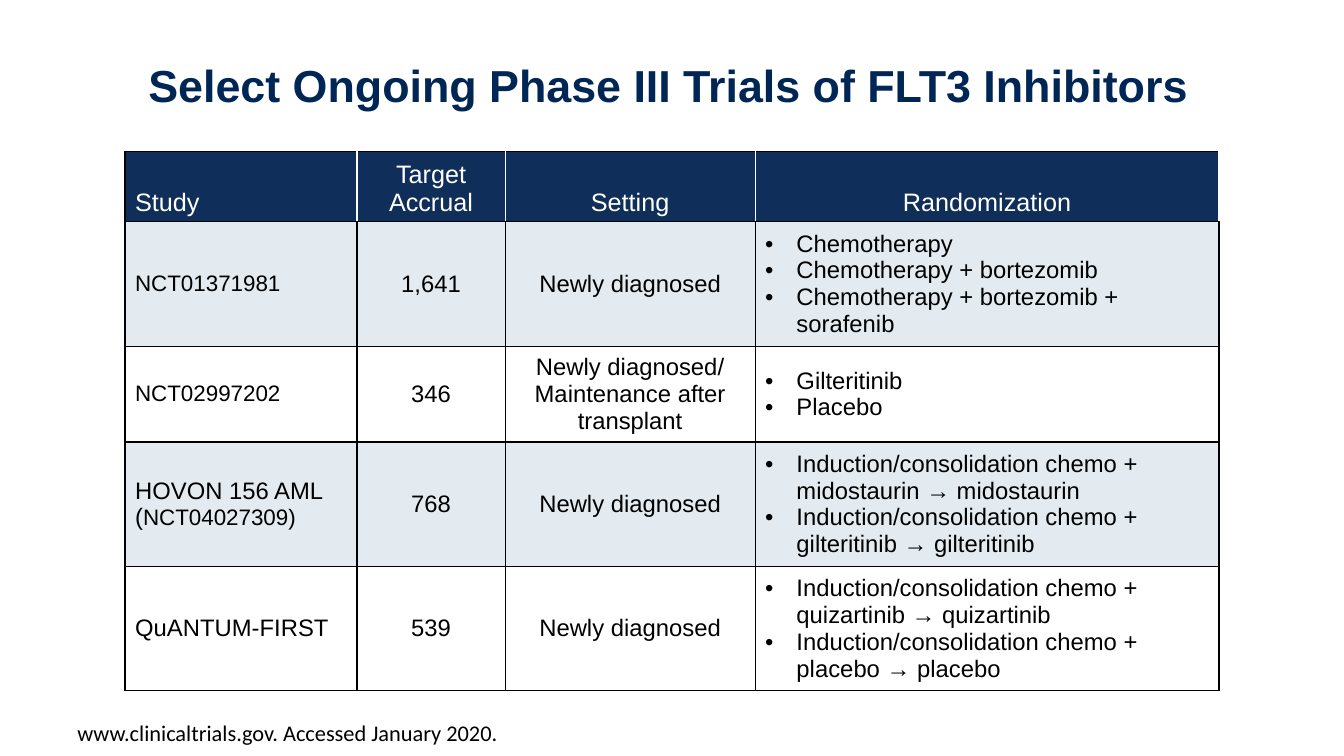
from pptx import Presentation
from pptx.dml.color import RGBColor as Rgb
from pptx.enum.text import MSO_ANCHOR as Anchor, PP_ALIGN as Align
from pptx.oxml.ns import qn
from pptx.util import Inches, Pt
from lxml.etree import SubElement

COLORS = {
    "title": "002656",
    "header": "0F2E59",
    "band": "E3EBF0",
    "white": "FFFFFF",
    "black": "000000",
}
COLUMN_WIDTHS = [2.3, 1.47, 2.48, 4.6]
ROW_HEIGHTS = [0.66, 1.16, 0.92, 1.16, 1.16]
HEADINGS = ["Study", "Target Accrual", "Setting", "Randomization"]
TRIALS = [
    ([[("NCT01371981", 16)]], "1,641", ["Newly diagnosed"],
     ["Chemotherapy", "Chemotherapy + bortezomib",
      "Chemotherapy + bortezomib + sorafenib"]),
    ([[("NCT02997202", 16)]], "346",
     ["Newly diagnosed/", "Maintenance after transplant"],
     ["Gilteritinib", "Placebo"]),
    ([[("HOVON 156 AML", 17)], [("(", 17), ("NCT04027309)", 16)]],
     "768", ["Newly diagnosed"],
     ["Induction/consolidation chemo + midostaurin → midostaurin",
      "Induction/consolidation chemo + gilteritinib → gilteritinib"]),
    ([[("QuANTUM-FIRST", 17)]], "539", ["Newly diagnosed"],
     ["Induction/consolidation chemo + quizartinib → quizartinib",
      "Induction/consolidation chemo + placebo → placebo"]),
]


def apply(target, **values):
    for name, value in values.items():
        setattr(target, name, value)


def write(frame, paragraphs, color, align=Align.LEFT, font="Arial", bold=False):
    for index, runs in enumerate(paragraphs):
        paragraph = frame.paragraphs[0] if index == 0 else frame.add_paragraph()
        paragraph.alignment = align
        for text, size in runs:
            run = paragraph.add_run()
            run.text = text
            apply(run.font, name=font, size=Pt(size), bold=bold)
            run.font.color.rgb = Rgb.from_string(COLORS[color])


def add_bullets(frame):
    for paragraph in frame.paragraphs:
        properties = paragraph._p.get_or_add_pPr()
        properties.set("marL", str(Inches(0.31)))
        properties.set("indent", str(-Inches(0.31)))
        SubElement(properties, qn("a:buFont"), typeface="Arial")
        SubElement(properties, qn("a:buChar"), char="•")


def style_cell(cell, fill, anchor, borders):
    cell.vertical_anchor = anchor
    properties = cell._tc.get_or_add_tcPr()
    for side, color in zip("LRTB", borders):
        line = SubElement(properties, qn(f"a:ln{side}"), w=str(Pt(1)))
        solid = SubElement(line, qn("a:solidFill"))
        SubElement(solid, qn("a:srgbClr"), val=COLORS[color])
    cell.fill.solid()
    cell.fill.fore_color.rgb = Rgb.from_string(COLORS[fill])


def add_text(slide, box, text, size, color, anchor=Anchor.TOP, **style):
    frame = slide.shapes.add_textbox(*map(Inches, box)).text_frame
    apply(frame, word_wrap=True, vertical_anchor=anchor)
    write(frame, [[(text, size)]], color, **style)
    return frame


def add_title(slide, box):
    title = add_text(slide, box, "Select Ongoing Phase III Trials of FLT3 Inhibitors",
                     32, "title", Anchor.MIDDLE, align=Align.CENTER, bold=True)
    title.paragraphs[0].line_spacing = 0.9


def add_trials(slide, left, top):
    box = (left, top, sum(COLUMN_WIDTHS), sum(ROW_HEIGHTS))
    trials = slide.shapes.add_table(
        len(ROW_HEIGHTS), len(COLUMN_WIDTHS), *map(Inches, box)).table
    for column, width in zip(trials.columns, COLUMN_WIDTHS):
        column.width = Inches(width)
    for row, height in zip(trials.rows, ROW_HEIGHTS):
        row.height = Inches(height)

    for index, heading in enumerate(HEADINGS):
        cell = trials.cell(0, index)
        left_edge = "white" if index else "black"
        style_cell(cell, "header", Anchor.BOTTOM,
                   [left_edge, "white", "black", "black"])
        write(cell.text_frame, [[(heading, 18)]], "white",
              Align.CENTER if index else Align.LEFT)

    for row, (study, accrual, setting, arms) in enumerate(TRIALS, 1):
        contents = [
            (study, Align.LEFT),
            ([[(accrual, 17)]], Align.CENTER),
            ([[(line, 17)] for line in setting], Align.CENTER),
            ([[(arm, 17)] for arm in arms], Align.LEFT),
        ]
        for index, (paragraphs, align) in enumerate(contents):
            cell = trials.cell(row, index)
            style_cell(cell, "band" if row % 2 else "white",
                       Anchor.MIDDLE, ["black"] * 4)
            write(cell.text_frame, paragraphs, "black", align)
        randomization = trials.cell(row, 3)
        randomization.margin_right = Inches(0.15)
        add_bullets(randomization.text_frame)


def add_source(slide, box):
    add_text(slide, box, "www.clinicaltrials.gov. Accessed January 2020.",
             16, "black", font="Calibri")


def main():
    deck = Presentation()
    apply(deck, slide_width=Inches(13.33), slide_height=Inches(7.5))
    slide = deck.slides.add_slide(deck.slide_layouts[6])
    add_title(slide, (0.48, 0.25, 12.31, 1.25))
    add_trials(slide, 1.24, 1.5)
    add_source(slide, (0.67, 7.09, 7.95, 0.37))
    deck.save("out.pptx")


if __name__ == "__main__":
    main()
